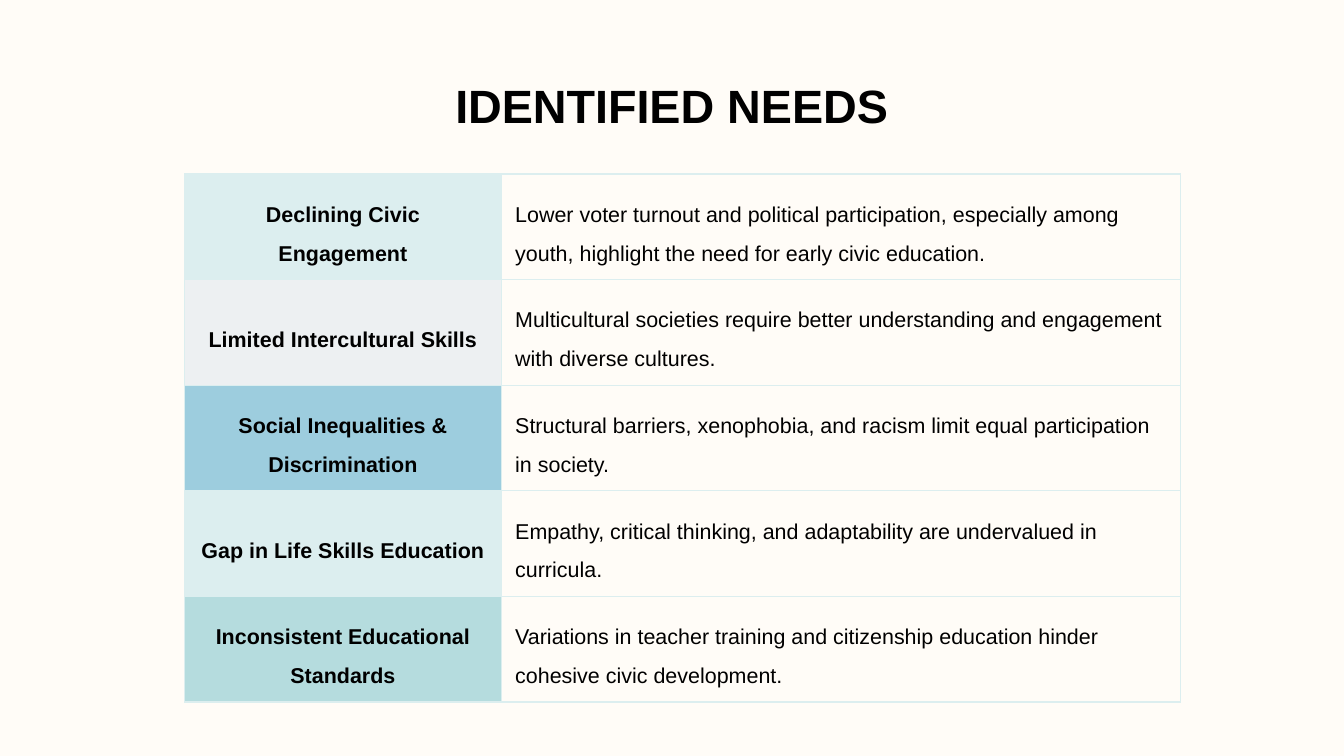
import pptx
import pptx.dml.color
import pptx.enum.text
import pptx.oxml
import pptx.oxml.ns
import pptx.util

Pt = pptx.util.Pt
RGBColor = pptx.dml.color.RGBColor
ALIGN = pptx.enum.text.PP_ALIGN
MIDDLE = pptx.enum.text.MSO_ANCHOR.MIDDLE

CREAM = RGBColor(0xFF, 0xFC, 0xF7)
BLACK = RGBColor(0, 0, 0)
PALE_AQUA = RGBColor(0xDC, 0xEE, 0xEF)
PALE_GREY = RGBColor(0xED, 0xF0, 0xF2)
SKY = RGBColor(0x9D, 0xCD, 0xDE)
TEAL = RGBColor(0xB5, 0xDC, 0xDE)

TITLE = "IDENTIFIED NEEDS"
NEEDS = [
    ("Declining Civic Engagement", PALE_AQUA,
     "Lower voter turnout and political participation, especially among youth, "
     "highlight the need for early civic education."),
    ("Limited Intercultural Skills", PALE_GREY,
     "Multicultural societies require better understanding and engagement "
     "with diverse cultures."),
    ("Social Inequalities & Discrimination", SKY,
     "Structural barriers, xenophobia, and racism limit equal participation in society."),
    ("Gap in Life Skills Education", PALE_AQUA,
     "Empathy, critical thinking, and adaptability are undervalued in curricula."),
    ("Inconsistent Educational Standards", TEAL,
     "Variations in teacher training and citizenship education hinder "
     "cohesive civic development."),
]

TABLE_LEFT, TABLE_TOP = 198, 186.5
COLUMN_WIDTHS = (339, 728)
ROW_HEIGHT = 104.4
CELL_MARGIN = 15
BORDER_WIDTH = 1.5


def write_text(frame, text, size=23, bold=False, align=ALIGN.LEFT, spacing=1.61, margin=0):
    frame.word_wrap = True
    frame.margin_left = frame.margin_right = Pt(margin)
    frame.margin_top = frame.margin_bottom = Pt(margin)
    paragraph = frame.paragraphs[0]
    paragraph.alignment = align
    paragraph.line_spacing = spacing
    run = paragraph.add_run()
    run.text = text
    run.font.name = "Arial"
    run.font.size = Pt(size)
    run.font.bold = bold
    run.font.color.rgb = BLACK


def add_borders(cell, color):
    """Draw all four cell edges; they must come before the fill in tcPr."""
    properties = cell._tc.get_or_add_tcPr()
    for position, side in enumerate(("lnL", "lnR", "lnT", "lnB")):
        properties.insert(position, pptx.oxml.parse_xml(
            f'<a:{side} {pptx.oxml.ns.nsdecls("a")} w="{int(Pt(BORDER_WIDTH))}">'
            f'<a:solidFill><a:srgbClr val="{color}"/></a:solidFill></a:{side}>'))


def add_needs_table(slide):
    table = slide.shapes.add_table(
        len(NEEDS), len(COLUMN_WIDTHS), Pt(TABLE_LEFT), Pt(TABLE_TOP),
        Pt(sum(COLUMN_WIDTHS)), Pt(ROW_HEIGHT * len(NEEDS))).table
    table.first_row = table.horz_banding = False
    for column, width in zip(table.columns, COLUMN_WIDTHS):
        column.width = Pt(width)
    for row, (need, color, explanation) in enumerate(NEEDS):
        table.rows[row].height = Pt(ROW_HEIGHT)
        need_cell, explanation_cell = table.cell(row, 0), table.cell(row, 1)
        write_text(need_cell.text_frame, need, bold=True, align=ALIGN.CENTER)
        write_text(explanation_cell.text_frame, explanation)
        need_cell.fill.solid()
        need_cell.fill.fore_color.rgb = color
        explanation_cell.fill.background()
        for cell in (need_cell, explanation_cell):
            cell.vertical_anchor = MIDDLE
            cell.margin_left = cell.margin_right = Pt(CELL_MARGIN)
            cell.margin_top = cell.margin_bottom = Pt(CELL_MARGIN)
            add_borders(cell, PALE_AQUA)


def main():
    presentation = pptx.Presentation()
    presentation.slide_width, presentation.slide_height = Pt(1440), Pt(810)
    slide = presentation.slides.add_slide(presentation.slide_layouts[6])
    slide.background.fill.solid()
    slide.background.fill.fore_color.rgb = CREAM

    add_needs_table(slide)
    title = slide.shapes.add_textbox(Pt(487.5), Pt(58.3), Pt(465), Pt(67))
    write_text(title.text_frame, TITLE, size=50, bold=True, align=ALIGN.CENTER, spacing=1.4)
    title.text_frame.auto_size = pptx.enum.text.MSO_AUTO_SIZE.SHAPE_TO_FIT_TEXT

    presentation.save("out.pptx")


if __name__ == "__main__":
    main()
